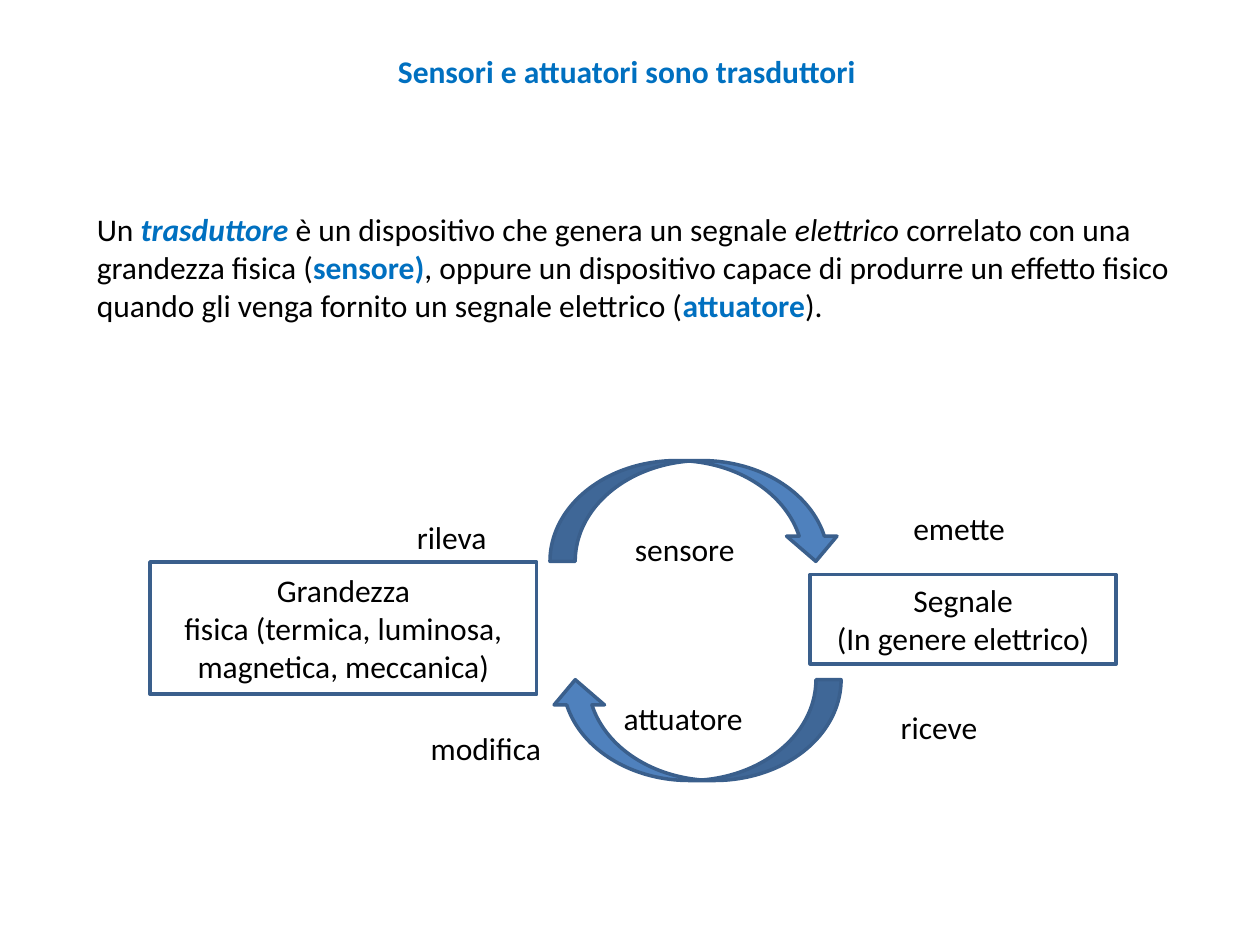
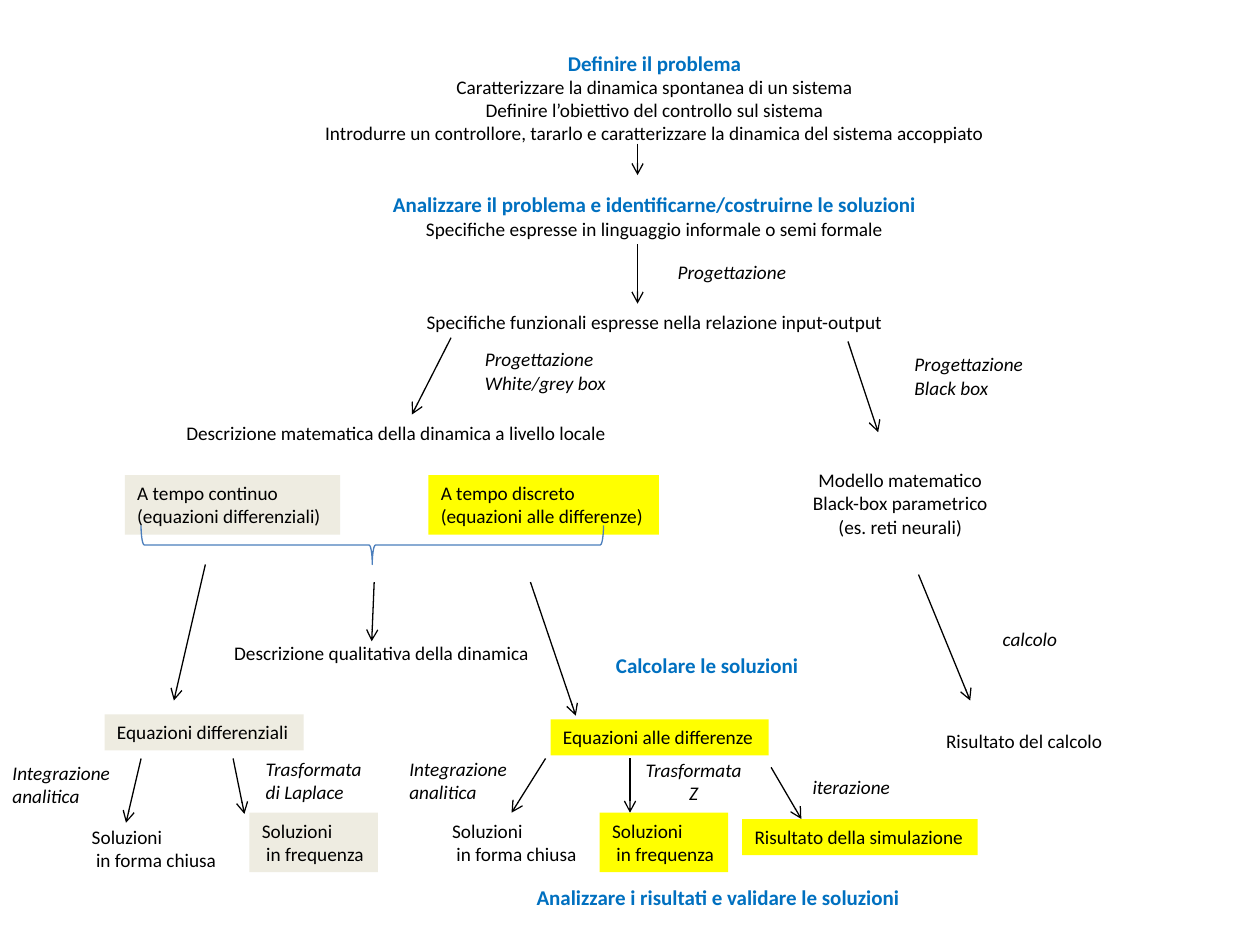
from lxml.etree import SubElement
from pptx import Presentation
from pptx.dml.color import RGBColor
from pptx.enum.shapes import MSO_CONNECTOR, MSO_SHAPE
from pptx.enum.text import MSO_ANCHOR, PP_ALIGN
from pptx.oxml.ns import qn
from pptx.util import Inches, Pt

FONT = "Calibri"
BLACK, WHITE, ACCENT = "000000", "FFFFFF", "0070C0"
ARROW_BLUE, OUTLINE_BLUE, BRACE_BLUE = "4F81BD", "3A5F8C", "4B7EBC"
CONTINUOUS, DISCRETE = "EEECE1", "FFFF00"
LEFT, CENTER = PP_ALIGN.LEFT, PP_ALIGN.CENTER

# style: size, colour, bold, italic
STYLES = {
    "title": (18, ACCENT, True, False),
    "body": (18, BLACK, False, False),
    "term": (18, ACCENT, True, False),
    "main term": (18, ACCENT, True, True),
    "emphasis": (18, BLACK, False, True),
    "phase": (12, ACCENT, True, False),
    "step": (11, BLACK, False, False),
    "method": (11, BLACK, False, True),
}

# Slide 1: transducers
TITLE = (3.06, 0.36, 3.87, ["Sensori e attuatori sono trasduttori"])
DEFINITION = [
    ("Un ", "body"),
    ("trasduttore", "main term"),
    (" è un dispositivo che genera un segnale ", "body"),
    ("elettrico", "emphasis"),
    (" correlato con una grandezza fisica (", "body"),
    ("sensore)", "term"),
    (", oppure un dispositivo capace di produrre un effetto fisico "
     "quando gli venga fornito un segnale elettrico (", "body"),
    ("attuatore", "term"),
    (").", "body"),
]
DOMAINS = [
    (1.19, 4.46, 3.07, 1.05,
     ["Grandezza", "fisica (termica, luminosa, magnetica, meccanica)"]),
    (6.43, 4.56, 2.43, 0.71, ["Segnale", "(In genere elettrico)"]),
]
CYCLE_ARROWS = [(4.64, 90), (2.9, 270)]  # top, rotation
CYCLE_LABELS = [
    (4.94, 4.16, 1.1, ["sensore"]),
    (4.85, 5.5, 1.28, ["attuatore"]),
    (3.21, 4.06, 0.84, ["rileva"]),
    (7.05, 5.57, 0.82, ["riceve"]),
    (7.15, 3.99, 0.94, ["emette"]),
    (3.32, 5.74, 1.09, ["modifica"]),
]

# Slide 2: from the problem to its solutions
OVERVIEW = [  # text, style, blank lines above
    ("Definire il problema", "phase", 0),
    ("Caratterizzare la dinamica spontanea di un sistema", "step", 0),
    ("Definire l’obiettivo del controllo sul sistema", "step", 0),
    ("Introdurre un controllore, tararlo e caratterizzare la dinamica "
     "del sistema accoppiato", "step", 0),
    ("Analizzare il problema e identificarne/costruirne le soluzioni",
     "phase", 2),
    ("Specifiche espresse in linguaggio informale o semi formale", "step", 0),
    ("Specifiche funzionali espresse nella relazione input-output",
     "step", 3),
]
PHASES = [
    (4.79, 5.13, 1.67, ["Calcolare le soluzioni"]),
    (4.16, 6.97, 3.12, ["Analizzare i risultati e validare le soluzioni"]),
]
CLOSED_FORM = ["Soluzioni", " in forma chiusa"]
FREQUENCY = ["Soluzioni", " in frequenza"]
INTEGRATION = ["Integrazione", "analitica"]
STEPS = [
    (1.38, 3.29, 3.55,
     ["Descrizione matematica della dinamica a livello locale"]),
    (1.76, 5.04, 2.55, ["Descrizione qualitativa della dinamica"]),
    (0.63, 6.5, 1.2, CLOSED_FORM),
    (3.49, 6.45, 1.2, CLOSED_FORM),
    (7.41, 5.74, 1.45, ["Risultato del calcolo"]),
]
BLACK_BOX = (6.34, 3.67, 1.61, ["Modello matematico", "Black-box parametrico",
                                "(es. reti neurali)"])
METHODS = [
    (5.28, 2.02, 1.07, ["Progettazione"]),
    (3.75, 2.71, 1.17, ["Progettazione", "White/grey box"]),
    (7.16, 2.75, 1.07, ["Progettazione", "Black box"]),
    (7.86, 4.93, 0.64, ["calcolo"]),
    (0, 5.99, 0.98, INTEGRATION),
    (3.15, 5.96, 0.98, INTEGRATION),
    (2.01, 5.96, 1.01, ["Trasformata", "di Laplace"]),
    (6.35, 6.1, 0.82, ["iterazione"]),
]
Z_TRANSFORM = (5, 5.97, 1.01, ["Trasformata", "Z"])
TIME_MODELS = {
    CONTINUOUS: [
        (0.99, 3.77, 1.71, ["A tempo continuo", "(equazioni differenziali)"]),
        (0.83, 5.67, 1.58, ["Equazioni differenziali"]),
        (1.98, 6.45, 1.02, FREQUENCY),
    ],
    DISCRETE: [
        (3.4, 3.77, 1.83, ["A tempo discreto", "(equazioni alle differenze)"]),
        (4.37, 5.71, 1.73, ["Equazioni alle differenze"]),
        (4.76, 6.45, 1.02, FREQUENCY),
        (5.89, 6.5, 1.87, ["Risultato della simulazione"]),
    ],
}
FLOWS = [  # from x, y, to x, y
    (5.06, 1.14, 5.06, 1.39),
    (5.06, 1.94, 5.06, 2.41),
    (3.58, 2.68, 3.27, 3.29),
    (6.73, 2.71, 6.97, 3.43),
    (2.97, 4.62, 2.95, 5.09),
    (7.29, 4.56, 7.7, 5.56),
    (1.63, 4.48, 1.38, 5.56),
    (4.21, 4.62, 4.57, 5.68),
    (1.12, 6.02, 1, 6.53),
    (1.85, 6.02, 1.94, 6.46),
    (4.33, 6.02, 4.06, 6.45),
    (5, 6.02, 5, 6.45),
    (6.12, 6.09, 6.36, 6.5),
]


def rgb(color):
    return RGBColor.from_string(color)


def line_height(size):
    """Height in points of one line of text."""
    return size * 1.22


def style_font(font, style):
    size, color, font.bold, font.italic = STYLES[style]
    font.name, font.size = FONT, Pt(size)
    font.color.rgb = rgb(color)


def add_paragraphs(frame, lines, style, align):
    for number, line in enumerate(lines):
        paragraph = frame.add_paragraph() if number else frame.paragraphs[0]
        paragraph.text = line
        paragraph.alignment = align
        style_font(paragraph.font, style)


def add_text_box(slide, left, top, width, height, wrap=True):
    box = slide.shapes.add_textbox(*map(Inches, (left, top, width, height)))
    box.text_frame.word_wrap = wrap
    return box


def add_label(slide, label, style, align=LEFT, fill=None):
    """Add a one-style text box whose height follows its lines."""
    left, top, width, lines = label
    height = 0.1 + len(lines) * line_height(STYLES[style][0]) / 72
    box = add_text_box(slide, left, top, width, height, wrap=False)
    if fill:
        box.fill.solid()
        box.fill.fore_color.rgb = rgb(fill)
    add_paragraphs(box.text_frame, lines, style, align)


def add_outlined(slide, preset, bounds, line, weight, fill=None, rotation=0):
    shape = slide.shapes.add_shape(preset, *map(Inches, bounds))
    shape.shadow.inherit = False
    shape.rotation = rotation
    if fill:
        shape.fill.solid()
        shape.fill.fore_color.rgb = rgb(fill)
    else:
        shape.fill.background()
    shape.line.color.rgb = rgb(line)
    shape.line.width = Pt(weight)
    return shape


def add_flow(slide, ends):
    flow = slide.shapes.add_connector(MSO_CONNECTOR.STRAIGHT,
                                      *map(Inches, ends))
    flow.line.color.rgb = rgb(BLACK)
    flow.line.width = Pt(0.75)
    properties = flow.element.spPr
    SubElement(properties.find(qn("a:ln")), qn("a:tailEnd"), type="arrow")
    SubElement(properties, qn("a:effectLst"))


def build_transducers(slide):
    add_label(slide, TITLE, "title")
    definition = add_text_box(slide, 0.67, 1.62, 8.74, 1.01)
    for text, style in DEFINITION:
        run = definition.text_frame.paragraphs[0].add_run()
        run.text = text
        style_font(run.font, style)

    for *bounds, lines in DOMAINS:
        domain = add_outlined(slide, MSO_SHAPE.RECTANGLE, bounds,
                              OUTLINE_BLUE, 2, WHITE)
        domain.text_frame.word_wrap = True
        domain.text_frame.vertical_anchor = MSO_ANCHOR.MIDDLE
        add_paragraphs(domain.text_frame, lines, "body", CENTER)
    for top, rotation in CYCLE_ARROWS:
        add_outlined(slide, MSO_SHAPE.CURVED_LEFT_ARROW,
                     (5.12, top, 0.8, 2.31), OUTLINE_BLUE, 2,
                     ARROW_BLUE, rotation)
    for label in CYCLE_LABELS:
        add_label(slide, label, "body")


def build_solution_map(slide):
    overview = add_text_box(slide, 2.32, 0.35, 5.75, 2.36).text_frame
    for number, (text, style, blank_lines) in enumerate(OVERVIEW):
        paragraph = (overview.add_paragraph() if number
                     else overview.paragraphs[0])
        paragraph.text = text
        paragraph.alignment = CENTER
        paragraph.space_before = Pt(blank_lines * line_height(11))
        style_font(paragraph.font, style)

    for fill, models in TIME_MODELS.items():
        for model in models:
            add_label(slide, model, "step", fill=fill)
    for style, labels in (("phase", PHASES), ("step", STEPS),
                          ("method", METHODS)):
        for label in labels:
            add_label(slide, label, style)
    add_label(slide, BLACK_BOX, "step", CENTER)
    add_label(slide, Z_TRANSFORM, "method", CENTER)
    add_outlined(slide, MSO_SHAPE.LEFT_BRACE, (2.8, 2.49, 0.31, 3.67),
                 BRACE_BLUE, 0.75, rotation=270)
    for ends in FLOWS:
        add_flow(slide, ends)


def main():
    deck = Presentation()
    deck.slide_width, deck.slide_height = Inches(10), Inches(7.5)
    for build in (build_transducers, build_solution_map):
        build(deck.slides.add_slide(deck.slide_layouts[6]))
    deck.save("out.pptx")


if __name__ == "__main__":
    main()
